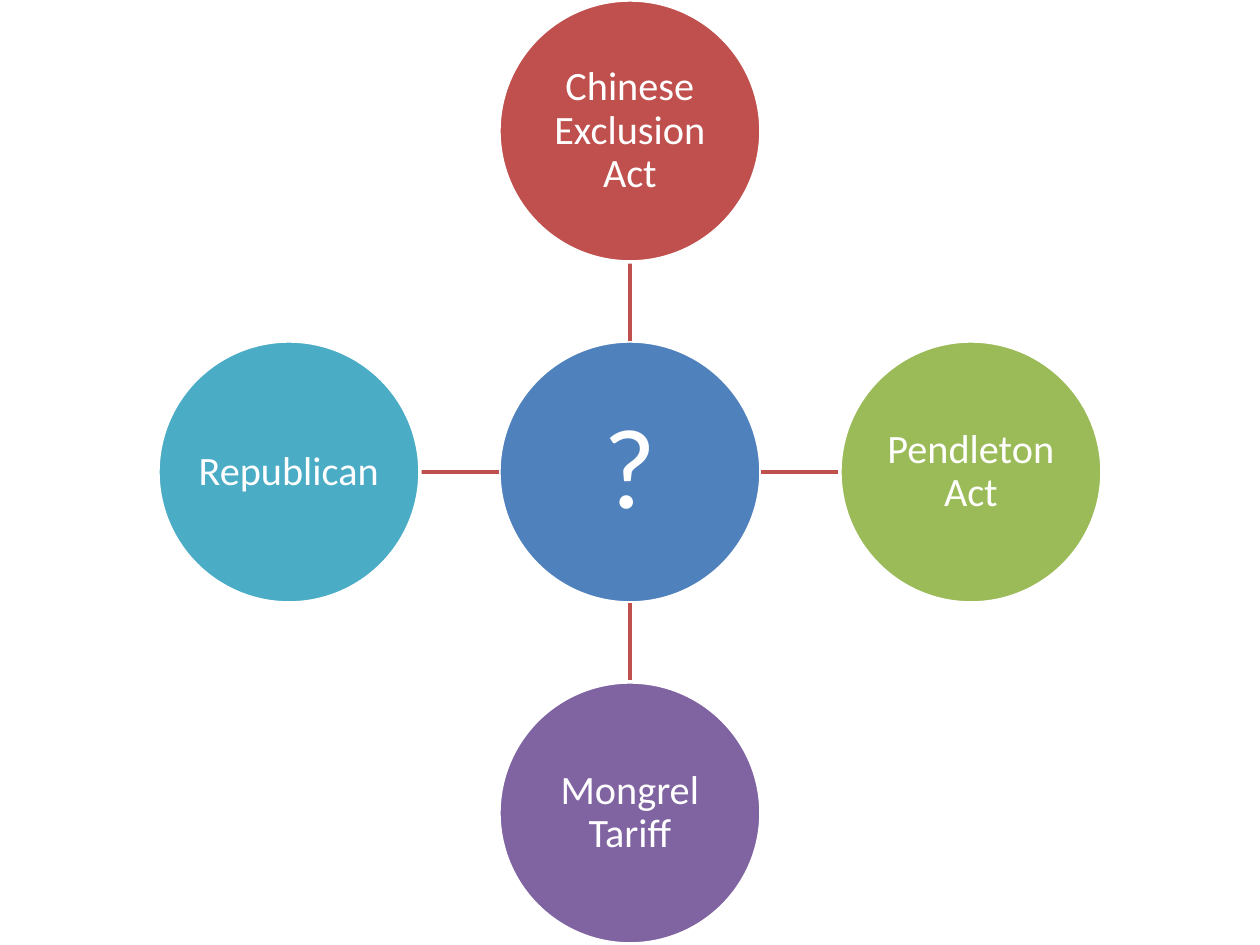
from lxml import etree
from pptx import Presentation
from pptx import util as u
from pptx.dml.color import RGBColor
from pptx.enum import shapes, text
from pptx.oxml.ns import qn

WIDTH, HEIGHT = 1260, 945
CENTER_X, CENTER_Y = 630, 472
RADIUS, PITCH = 131, 341
WHITE, BLUE, RED = "FFFFFF", "4F81BD", "C0504D"

# Step right, step down, label, fill
SPOKES = [
    (0, -1, "Chinese Exclusion Act", RED),
    (1, 0, "Pendleton Act", "9BBB59"),
    (0, 1, "Mongrel Tariff", "8064A2"),
    (-1, 0, "Republican", "4BACC6"),
]


def px(n):
    """Turn px into EMU at 126 px to the inch."""
    return u.Emu(round(n * 914400 / 126))


def rgb(value):
    return RGBColor.from_string(value)


def write(tf, content, size=23, font="Calibri", color=WHITE, inset=0):
    tf.word_wrap = True
    tf.vertical_anchor = text.MSO_ANCHOR.MIDDLE
    tf.margin_left = tf.margin_right = px(inset)
    tf.margin_top = tf.margin_bottom = px(inset)
    p = tf.paragraphs[0]
    p.alignment = text.PP_ALIGN.CENTER
    p.line_spacing = 0.9
    r = p.add_run()
    r.text = content
    r.font.size = u.Pt(size)
    r.font.name = font
    r.font.color.rgb = rgb(color)


class Diagram:
    def __init__(self, slide, line_width=2):
        self.s = slide
        self.line_width = u.Pt(line_width)

    def circle(self, x, y, label, fill, **style):
        """Draw a labelled circle centred on x, y."""
        sp = self.s.shapes.add_shape(
            shapes.MSO_SHAPE.OVAL, px(x - RADIUS), px(y - RADIUS),
            px(2 * RADIUS), px(2 * RADIUS))
        sp.shadow.inherit = False
        sp.fill.solid()
        sp.fill.fore_color.rgb = rgb(fill)
        sp.line.color.rgb = rgb(WHITE)
        sp.line.width = self.line_width
        write(sp.text_frame, label, **style)

    def line(self, x1, y1, x2, y2, color=RED):
        cxn = self.s.shapes.add_connector(
            shapes.MSO_CONNECTOR.STRAIGHT, px(x1), px(y1), px(x2), px(y2))
        cxn.line.color.rgb = rgb(color)
        cxn.line.width = self.line_width
        etree.SubElement(cxn._element.spPr, qn("a:effectLst"))


def main():
    prs = Presentation()
    prs.slide_width, prs.slide_height = px(WIDTH), px(HEIGHT)
    diagram = Diagram(prs.slides.add_slide(prs.slide_layouts[6]))

    diagram.circle(CENTER_X, CENTER_Y, "?", BLUE, size=65, inset=6)
    near, far = RADIUS, PITCH - RADIUS
    for dx, dy, label, fill in SPOKES:
        diagram.line(CENTER_X + dx * near, CENTER_Y + dy * near,
                     CENTER_X + dx * far, CENTER_Y + dy * far)
        diagram.circle(CENTER_X + dx * PITCH, CENTER_Y + dy * PITCH, label, fill)

    prs.save("out.pptx")


if __name__ == "__main__":
    main()
